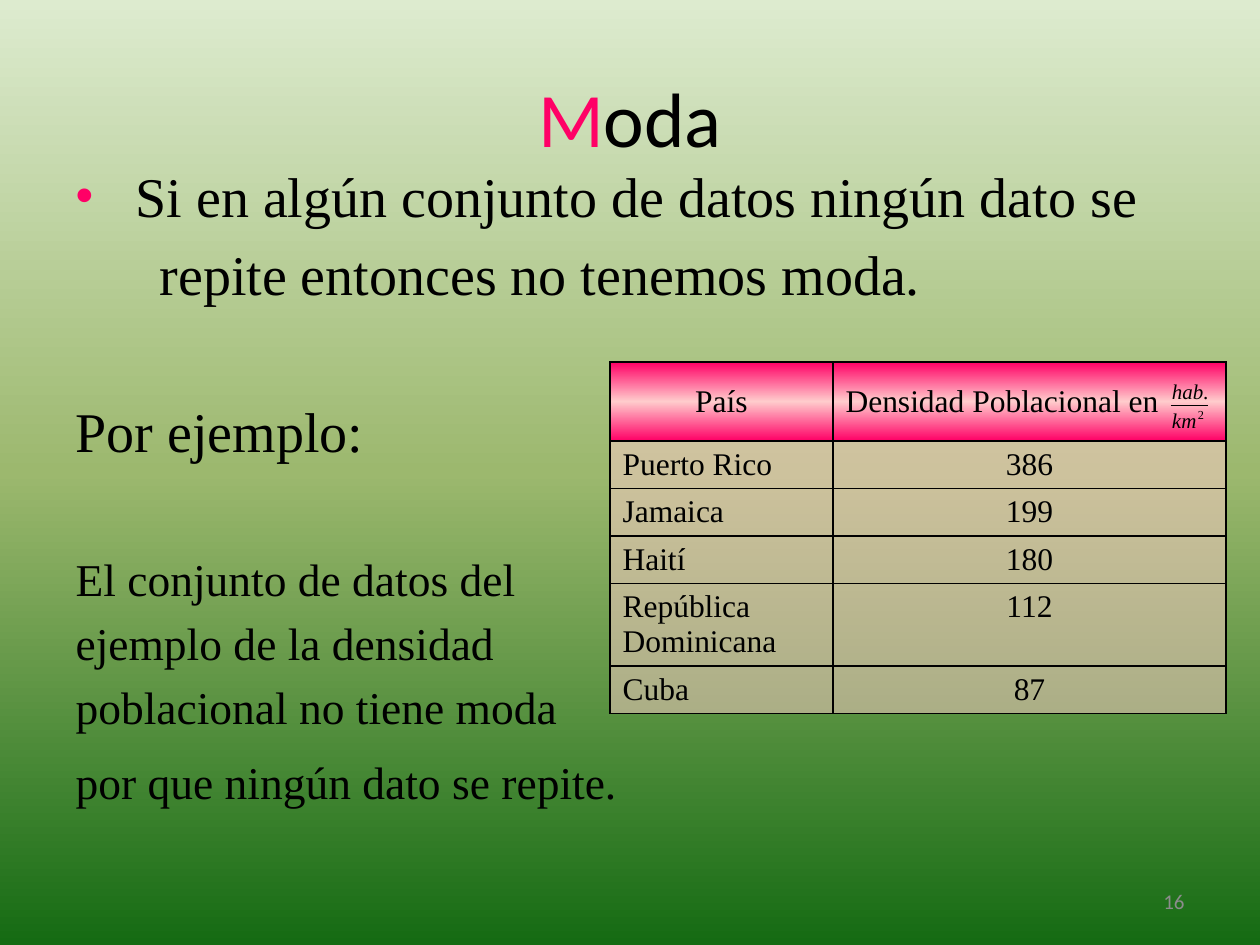
import copy
import lxml.etree
import pptx
import pptx.dml.color
import pptx.enum.shapes
import pptx.enum.text
import pptx.oxml.ns
import pptx.util

PX = 914400 / 126  # EMU in one px
RGB = pptx.dml.color.RGBColor
BLACK = RGB(0x00, 0x00, 0x00)
PINK = RGB(0xFF, 0x00, 0x66)
PALE_PINK = RGB(0xFF, 0xCC, 0xCC)
GRAY = RGB(0x8C, 0x8C, 0x8C)
SKY = RGB(0xDD, 0xEB, 0xCF)
LEAF = RGB(0x9C, 0xB8, 0x6E)
FOREST = RGB(0x15, 0x6B, 0x13)
SERIF, SANS = "Times New Roman", "Calibri"
ALIGN = pptx.enum.text.PP_ALIGN
MIDDLE = pptx.enum.text.MSO_ANCHOR.MIDDLE
qn = pptx.oxml.ns.qn


def write(paragraph, text, size=18, font=SERIF, color=BLACK, italic=False,
          align=ALIGN.LEFT, before=0):
    paragraph.alignment = align
    paragraph.space_before = pptx.util.Pt(before)
    run = paragraph.add_run()
    run.text = text
    run.font.size = pptx.util.Pt(size)
    run.font.name = font
    run.font.italic = italic
    run.font.color.rgb = color


def fill_downwards(fill, owner, colors):
    """Vertical gradient with three evenly spaced stops."""
    fill.gradient()
    fill.gradient_angle = 270
    stop_list = next(owner.iter(qn("a:gsLst")))
    stop_list.insert(1, copy.deepcopy(stop_list[0]))
    for i, (stop, color) in enumerate(zip(fill.gradient_stops, colors)):
        stop.position = i / 2
        stop.color.rgb = color


deck = pptx.Presentation()
deck.slide_width, deck.slide_height = round(1260 * PX), round(945 * PX)
slide = deck.slides.add_slide(deck.slide_layouts[1])
fill_downwards(slide.background.fill, slide.element, (SKY, LEAF, FOREST))

# Title
title = slide.shapes.title
title.left, title.top, title.width, title.height = (
    round(v * PX) for v in (63, 38, 1134, 158))
title.text_frame.vertical_anchor = MIDDLE
for letters, color in (("M", PINK), ("oda", BLACK)):
    write(title.text_frame.paragraphs[0], letters, size=44, font=SANS,
          color=color, align=ALIGN.CENTER)

# Explanation: text, size, space before, left margin in px
explanation = [
    ("Si en algún conjunto de datos ningún dato se", 32, 6.4, 60),
    ("repite entonces no tenemos moda.", 32, 6.4, 84),
    ("Por ejemplo:", 32, 51.2, 0),
    ("El conjunto de datos del", 26, 50, 0),
    ("ejemplo de la densidad", 26, 5.2, 0),
    ("poblacional no tiene moda", 26, 5.2, 0),
    ("por que ningún dato se repite.", 26, 12, 0),
]
body = slide.placeholders[1]
body.left, body.top, body.width, body.height = (
    round(v * PX) for v in (63, 155, 1153, 689))
body.text_frame.auto_size = pptx.enum.text.MSO_AUTO_SIZE.NONE
for i, (text, size, before, margin) in enumerate(explanation):
    line = body.text_frame.add_paragraph() if i else body.text_frame.paragraphs[0]
    write(line, text, size=size, before=before)
    props = line._p.get_or_add_pPr()
    props.set("marL", str(round(margin * PX)))
    props.set("indent", "0" if i else str(-round(margin * PX)))
    if i:
        lxml.etree.SubElement(props, qn("a:buNone"))
    else:
        bullet_color = lxml.etree.SubElement(props, qn("a:buClr"))
        lxml.etree.SubElement(bullet_color, qn("a:srgbClr"), val=str(PINK))
        lxml.etree.SubElement(props, qn("a:buSzPct"), val="90000")
        lxml.etree.SubElement(props, qn("a:buChar"), char="•")

# Density table
densities = [
    ("País", "Densidad Poblacional en"),
    ("Puerto Rico", "386"),
    ("Jamaica", "199"),
    ("Haití", "180"),
    ("República Dominicana", "112"),
    ("Cuba", "87"),
]
row_heights = (79, 47, 47, 47, 82, 47)
table = slide.shapes.add_table(
    len(densities), 2, *(round(v * PX) for v in (610, 362, 616, sum(row_heights)))).table
table.first_row = table.horz_banding = False
for column, width in zip(table.columns, (223, 393)):
    column.width = round(width * PX)
for r, (row, height) in enumerate(zip(densities, row_heights)):
    table.rows[r].height = round(height * PX)
    for c, text in enumerate(row):
        cell = table.cell(r, c)
        centred = (r == 0) != (c == 1)
        write(cell.text_frame.paragraphs[0], text,
              align=ALIGN.CENTER if centred else ALIGN.LEFT)
        cell_props = cell._tc.get_or_add_tcPr()
        if r == 0:
            cell.vertical_anchor = MIDDLE
            fill_downwards(cell.fill, cell_props, (PINK, PALE_PINK, PINK))
        else:
            cell.fill.solid()
            cell.fill.fore_color.rgb = PALE_PINK
            tint = next(cell_props.iter(qn("a:srgbClr")))
            lxml.etree.SubElement(tint, qn("a:alpha"), val="50000")
        for i, side in enumerate(("a:lnL", "a:lnR", "a:lnT", "a:lnB")):
            border = lxml.etree.Element(qn(side), w="12700")
            ink = lxml.etree.SubElement(border, qn("a:solidFill"))
            lxml.etree.SubElement(ink, qn("a:srgbClr"), val=str(BLACK))
            cell_props.insert(i, border)

# Unit fraction in the table header
fraction_bar = slide.shapes.add_connector(
    pptx.enum.shapes.MSO_CONNECTOR.STRAIGHT,
    *(round(v * PX) for v in (1171, 405, 1208, 405)))
fraction_bar.line.color.rgb = BLACK
fraction_bar.line.width = pptx.util.Pt(0.5)
lxml.etree.SubElement(fraction_bar._element.spPr, qn("a:effectLst"))

unit_parts = [
    ("hab", 12, True, (1172, 379, 34, 25)),
    (".", 12, False, (1203, 379, 8, 25)),
    ("km", 12, True, (1172, 408, 30, 25)),
    ("2", 7, False, (1198, 407, 9, 15)),
]
for text, size, italic, place in unit_parts:
    frame = slide.shapes.add_textbox(*(round(v * PX) for v in place)).text_frame
    frame.margin_left = frame.margin_right = frame.margin_top = frame.margin_bottom = 0
    frame.word_wrap = True
    write(frame.paragraphs[0], text, size=size, italic=italic)

# Slide number
number = slide.shapes.add_textbox(*(round(v * PX) for v in (903, 876, 294, 50))).text_frame
number.word_wrap = True
number.vertical_anchor = MIDDLE
write(number.paragraphs[0], "16", size=12, font=SANS, color=GRAY, align=ALIGN.RIGHT)

deck.save("out.pptx")
